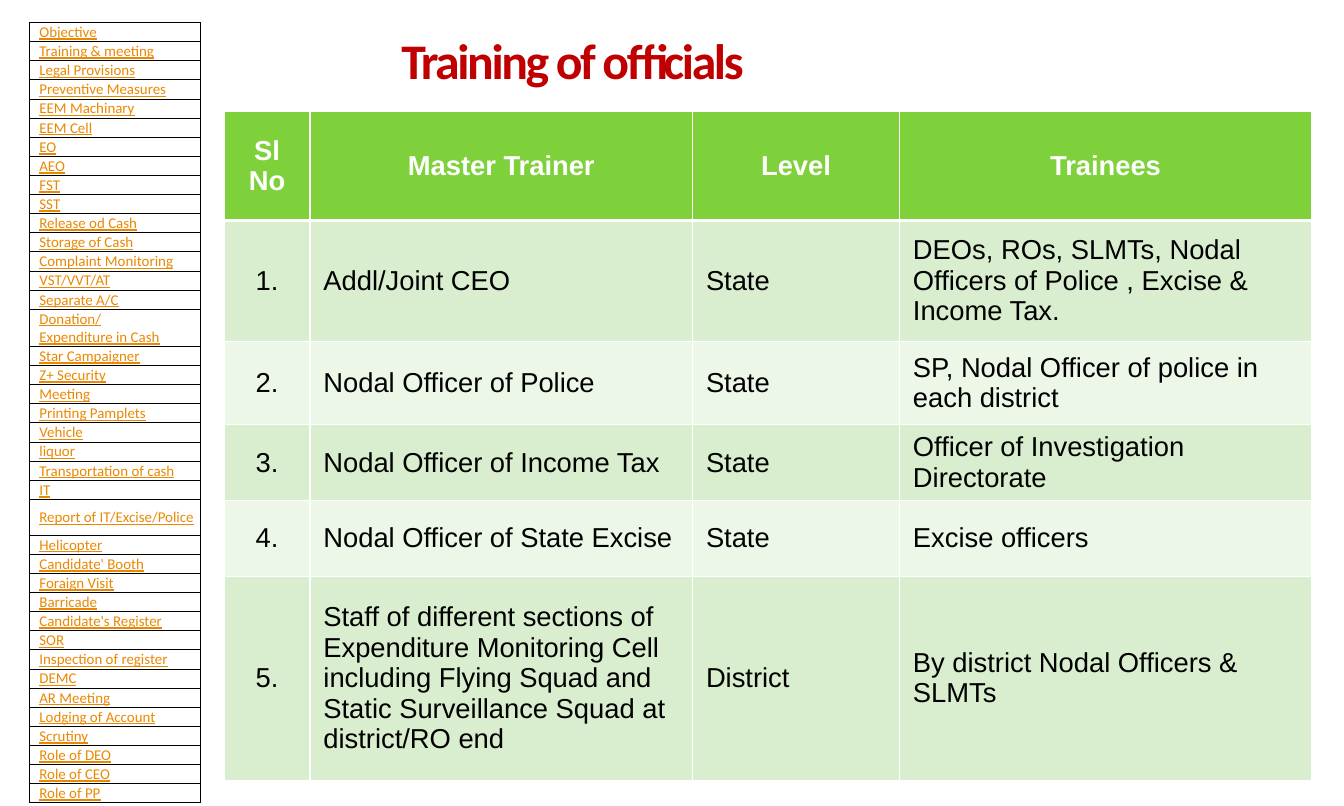
from lxml import etree
from pptx import Presentation
from pptx import util as u
from pptx.dml.color import RGBColor
from pptx.enum import text
from pptx.oxml import ns

WHITE = RGBColor(0xFF, 0xFF, 0xFF)
BLACK = RGBColor(0, 0, 0)
RED = RGBColor(0xC0, 0, 0)
ORANGE = RGBColor(0xEB, 0x88, 0x03)
GREEN = RGBColor(0x7F, 0xD1, 0x3B)
BANDS = (RGBColor(0xD8, 0xEE, 0xCE), RGBColor(0xEC, 0xF7, 0xE8))

TOPICS = [
    "Objective", "Training & meeting", "Legal Provisions", "Preventive Measures",
    "EEM Machinary", "EEM Cell", "EO", "AEO", "FST", "SST", "Release od Cash",
    "Storage of Cash", "Complaint Monitoring", "VST/VVT/AT", "Separate A/C",
    "Donation/\nExpenditure in Cash", "Star Campaigner", "Z+ Security", "Meeting",
    "Printing Pamplets", "Vehicle", "liquor", "Transportation of cash", "IT",
    "Report of IT/Excise/Police", "Helicopter", "Candidate' Booth", "Foraign Visit",
    "Barricade", "Candidate's Register", "SOR", "Inspection of register", "DEMC",
    "AR Meeting", "Lodging of Account", "Scrutiny", "Role of DEO", "Role of CEO",
    "Role of PP",
]
TALL_TOPICS = {"Donation/\nExpenditure in Cash": 0.41, "Report of IT/Excise/Police": 0.4}

TRAINING = [
    ("Sl No", "Master Trainer", "Level", "Trainees"),
    ("1.", "Addl/Joint CEO", "State",
     "DEOs, ROs, SLMTs, Nodal Officers of Police , Excise & Income Tax."),
    ("2.", "Nodal Officer of Police", "State",
     "SP, Nodal Officer of police in each district"),
    ("3.", "Nodal Officer of Income Tax", "State",
     "Officer of Investigation Directorate"),
    ("4.", "Nodal Officer of State Excise", "State", "Excise officers"),
    ("5.", "Staff of different sections of Expenditure Monitoring Cell including "
           "Flying Squad and Static Surveillance Squad at district/RO end",
     "District", "By district Nodal Officers & SLMTs"),
]
TRAINING_COLUMNS = [0.96, 4.27, 2.31, 4.6]
TRAINING_ROWS = [1.21, 1.35, 0.93, 0.85, 0.84, 2.28]


def apply(target, formats):
    for name, value in formats.items():
        setattr(target, name, value)


def style_text(frame, color, align=text.PP_ALIGN.LEFT, **formats):
    for paragraph in frame.paragraphs:
        paragraph.alignment = align
        for run in paragraph.runs:
            apply(run.font, formats)
            run.font.color.rgb = color


def set_margins(target, left, top, right, bottom):
    apply(target, {
        "margin_left": u.Inches(left), "margin_top": u.Inches(top),
        "margin_right": u.Inches(right), "margin_bottom": u.Inches(bottom),
        "vertical_anchor": text.MSO_ANCHOR.MIDDLE,
    })


def set_borders(cell, color, widths):
    """Widths in points, in the order left, right, top, bottom."""
    properties = cell._tc.get_or_add_tcPr()
    for side, width in zip("LRTB", widths):
        line = etree.SubElement(properties, ns.qn(f"a:ln{side}"), w=str(u.Pt(width)))
        fill = etree.SubElement(line, ns.qn("a:solidFill"))
        etree.SubElement(fill, ns.qn("a:srgbClr"), val=str(color))


def add_plain_table(slide, left, top, columns, rows):
    table = slide.shapes.add_table(
        len(rows), len(columns), u.Inches(left), u.Inches(top),
        u.Inches(sum(columns)), u.Inches(sum(rows))).table
    apply(table, {"first_row": False, "horz_banding": False})
    for column, width in zip(table.columns, columns):
        column.width = u.Inches(width)
    for row, height in zip(table.rows, rows):
        row.height = u.Inches(height)
    return table


def add_topic_list(slide, left, top, width):
    heights = [TALL_TOPICS.get(topic, 0.21) for topic in TOPICS]
    table = add_plain_table(slide, left, top, [width], heights)
    for index, topic in enumerate(TOPICS):
        cell = table.cell(index, 0)
        cell.text = topic
        set_margins(cell, 0.11, 0.01, 0.01, 0)
        set_borders(cell, BLACK, [0.5] * 4)
        cell.fill.background()
        style_text(cell.text_frame, ORANGE, name="Calibri", size=u.Pt(12),
                   underline=True)


def add_title(slide, left, top, width, height):
    frame = slide.shapes.add_textbox(
        u.Inches(left), u.Inches(top), u.Inches(width), u.Inches(height)).text_frame
    frame.word_wrap = True
    set_margins(frame, 0.1, 0.05, 0.1, 0.05)
    frame.text = "Training of officials"
    style_text(frame, RED, name="Calibri", size=u.Pt(40), bold=True)
    title = frame.paragraphs[0]
    title.line_spacing = 0.9
    # Tight letter spacing, in hundredths of a point
    title.runs[0]._r.get_or_add_rPr().set("spc", "-190")


def add_training_table(slide, left, top):
    table = add_plain_table(slide, left, top, TRAINING_COLUMNS, TRAINING_ROWS)
    table.first_row = True
    for row, entries in enumerate(TRAINING):
        header = row == 0
        for column, entry in enumerate(entries):
            cell = table.cell(row, column)
            cell.text = entry
            set_margins(cell, 0.15, 0.06, 0.15, 0.06)
            set_borders(cell, WHITE,
                        [1, 1, 3 if row == 1 else 1, 3 if header else 1])
            cell.fill.solid()
            cell.fill.fore_color.rgb = GREEN if header else BANDS[(row - 1) % 2]
            centred = header or column == 0
            style_text(
                cell.text_frame, WHITE if header else BLACK,
                text.PP_ALIGN.CENTER if centred else text.PP_ALIGN.LEFT,
                name="Arial", size=u.Pt(22), bold=header)


def main():
    deck = Presentation()
    apply(deck, {"slide_width": u.Inches(15), "slide_height": u.Inches(9)})
    slide = deck.slides.add_slide(deck.slide_layouts[6])
    # Topic list down the left side
    add_topic_list(slide, 0.33, 0.25, 1.91)
    # Heading and main table
    add_title(slide, 4.38, 0.33, 10.62, 0.76)
    add_training_table(slide, 2.5, 1.25)
    deck.save("out.pptx")


if __name__ == "__main__":
    main()
